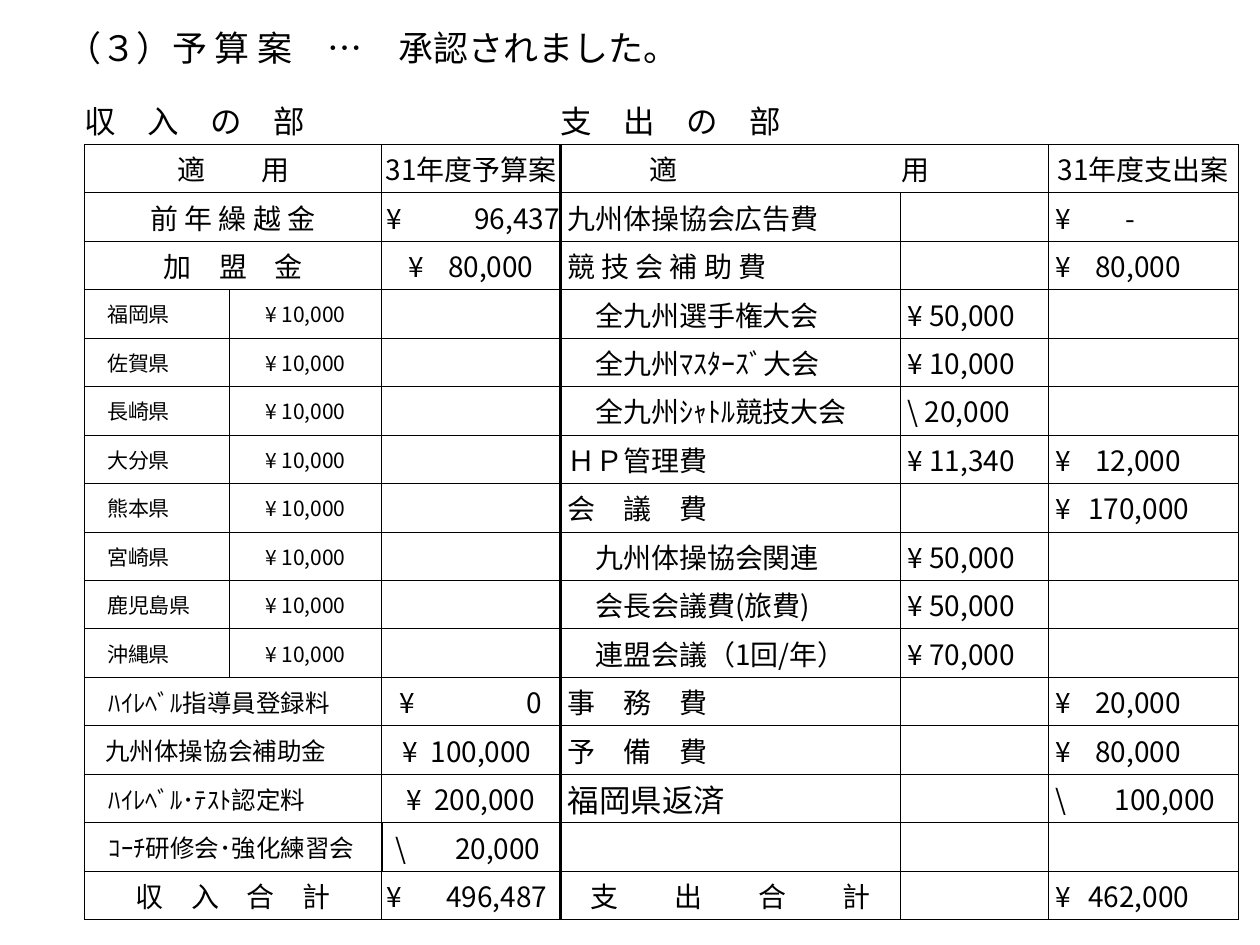
import dataclasses
import pptx
import pptx.util
import pptx.dml.color
import pptx.enum.text
import pptx.oxml
import pptx.oxml.ns

Pt = pptx.util.Pt
Align = pptx.enum.text.PP_ALIGN
Anchor = pptx.enum.text.MSO_ANCHOR
qn = pptx.oxml.ns.qn


@dataclasses.dataclass(frozen=True)
class Theme:
    font: str = "Noto Sans CJK JP"
    ink: str = "000000"
    paper: str = "FFFFFF"
    title: float = 20
    head: float = 18
    body: float = 16
    item: float = 14
    small: float = 12
    thin: float = 0.5
    mid: float = 1
    thick: float = 2


@dataclasses.dataclass(frozen=True)
class Entry:
    text: str
    size: float = 16
    left: float = 0
    tabs: tuple = ()
    align: object = Align.LEFT


theme = Theme()


def mid(text, size=theme.body):
    return Entry(text, size, align=Align.CENTER)


def sum_at(text, left, gap):
    return Entry(text, left=left, tabs=(gap,))


def cost(text, left=4, size=theme.body):
    return Entry(text, size, left)


def paid(text, gap):
    return sum_at(text, 4, gap)


PLACES = ["福岡県", "佐賀県", "長崎県", "大分県", "熊本県", "宮崎県", "鹿児島県", "沖縄県"]
SUB = 20

INCOME = [
    (Entry("収　入　の　部", theme.head), None, None),
    (Entry("適\t用", left=53, tabs=(48,)), None, mid("31年度予算案")),
    (mid("前 年 繰 越 金"), None, sum_at("¥\t96,437", 3, 50)),
    (mid("加　盟　金"), None, sum_at("¥\t80,000", 15, 23)),
    *[(Entry(place, theme.small, 13), mid("¥ 10,000", theme.small), None) for place in PLACES],
    (Entry("ﾊｲﾚﾍﾞﾙ指導員登録料", theme.item, 14), None, sum_at("¥\t0", 10, 73)),
    (Entry("九州体操協会補助金", theme.item, 12), None, sum_at("¥\t100,000", 12, 16)),
    (Entry("ﾊｲﾚﾍﾞﾙ･ﾃｽﾄ認定料", theme.item, 14), None, sum_at("¥\t200,000", 14, 16)),
    (Entry("ｺｰﾁ研修会･強化練習会", theme.item, 14), None, sum_at("\\\t20,000", 8, 34)),
    (mid("収　入　合　計"), None, sum_at("¥\t496,487", 3, 34)),
]

SPEND = [
    (Entry("支　出　の　部", theme.head), None, None),
    (Entry("適\t用", left=51, tabs=(144,)), None, mid("31年度支出案")),
    (cost("九州体操協会広告費"), None, paid("¥\t-", 40)),
    (cost("競 技 会 補 助 費"), None, paid("¥\t80,000", 23)),
    (cost("全九州選手権大会", SUB), cost("¥ 50,000"), None),
    (cost("全九州ﾏｽﾀｰｽﾞ大会", SUB), cost("¥ 10,000"), None),
    (cost("全九州ｼｬﾄﾙ競技大会", SUB), cost("\\ 20,000"), None),
    (cost("ＨＰ管理費"), cost("¥ 11,340"), paid("¥\t12,000", 23)),
    (cost("会　議　費"), None, paid("¥\t170,000", 19)),
    (cost("九州体操協会関連", SUB), cost("¥ 50,000"), None),
    (cost("会長会議費(旅費)", SUB), cost("¥ 50,000"), None),
    (cost("連盟会議（1回/年）", SUB), cost("¥ 70,000"), None),
    (cost("事　務　費"), None, paid("¥\t20,000", 23)),
    (cost("予　備　費"), None, paid("¥\t80,000", 23)),
    (cost("福岡県返済", size=theme.head), None, paid("\\\t100,000", 34)),
    (None, None, None),
    (Entry("支\t出\t合\t計", left=17, tabs=(48, 96, 144)), None, paid("¥\t462,000", 19)),
]

WIDTHS = [82.8, 87.2, 102.2, 194.4, 84.2, 108.7]


def style(para, size):
    for run in para.runs:
        font = run.font
        font.size = Pt(size)
        font.name = theme.font
        font.color.rgb = pptx.dml.color.RGBColor.from_string(theme.ink)
        east = pptx.oxml.parse_xml(
            f'<a:ea {pptx.oxml.ns.nsdecls("a")} typeface="{theme.font}"/>')
        font._element.find(qn("a:latin")).addnext(east)


def rule(cell, sides):
    props = cell._tc.get_or_add_tcPr()
    for spot, side in enumerate(s for s in "LRTB" if s in sides):
        line = pptx.oxml.parse_xml(
            f'<a:ln{side} {pptx.oxml.ns.nsdecls("a")} w="{Pt(sides[side])}">'
            f'<a:solidFill><a:srgbClr val="{theme.ink}"/></a:solidFill></a:ln{side}>')
        props.insert(spot, line)


def edges(row, col, last):
    if row == 0:
        return {"B": theme.thin}
    sides = dict.fromkeys("LRTB", theme.thin)
    if col == 2:
        sides["R"] = theme.thick
    if col == 3:
        sides["L"] = theme.thick
    if row == last - 1 and col in (1, 2):
        sides["R" if col == 1 else "L"] = theme.mid
    if row == last - 1 and col == 0:
        sides["R"] = theme.mid
    return sides


def write(cell, entry):
    cell.text_frame.text = entry.text
    cell.margin_left = Pt(entry.left)
    para = cell.text_frame.paragraphs[0]
    para.alignment = entry.align
    style(para, entry.size)
    if entry.tabs:
        stops = "".join(f'<a:tab pos="{Pt(tab)}" algn="l"/>' for tab in entry.tabs)
        para._p.get_or_add_pPr().append(pptx.oxml.parse_xml(
            f'<a:tabLst {pptx.oxml.ns.nsdecls("a")}>{stops}</a:tabLst>'))


def add_title(slide, left, top, width, height):
    shape = slide.shapes.title
    shape.left, shape.top = Pt(left), Pt(top)
    shape.width, shape.height = Pt(width), Pt(height)
    frame = shape.text_frame
    frame.text = "（３）予 算 案　…　承認されました。"
    frame.word_wrap = True
    frame.margin_left = Pt(13)
    frame.vertical_anchor = Anchor.MIDDLE
    para = frame.paragraphs[0]
    para.alignment = Align.LEFT
    style(para, theme.title)


def add_budget(slide, left, top, width, height):
    rows = [gain + loss for gain, loss in zip(INCOME, SPEND)]
    table = slide.shapes.add_table(
        len(rows), len(WIDTHS), Pt(left), Pt(top), Pt(width), Pt(height)).table
    table.first_row = table.horz_banding = False
    for col, size in zip(table.columns, WIDTHS):
        col.width = Pt(size * width / sum(WIDTHS))
    for r, row in enumerate(rows):
        table.rows[r].height = Pt(height / len(rows))
        for c, entry in enumerate(row):
            cell = table.cell(r, c)
            cell.margin_left = cell.margin_right = 0
            cell.margin_top = cell.margin_bottom = 0
            cell.vertical_anchor = Anchor.MIDDLE
            cell.fill.solid()
            cell.fill.fore_color.rgb = pptx.dml.color.RGBColor.from_string(theme.paper)
            rule(cell, edges(r, c, len(rows) - 1))
            if entry:
                write(cell, entry)
        if row[1] is None:
            table.cell(r, 0).merge(table.cell(r, 1))
    table.cell(1, 3).merge(table.cell(1, 4))


def main():
    deck = pptx.Presentation()
    deck.slide_width, deck.slide_height = Pt(720), Pt(540)
    slide = deck.slides.add_slide(deck.slide_layouts[5])
    add_title(slide, 25.2, 11.5, 657.4, 31.7)
    add_budget(slide, 48.2, 54.7, 659.5, 470.9)
    deck.save("out.pptx")


if __name__ == "__main__":
    main()
